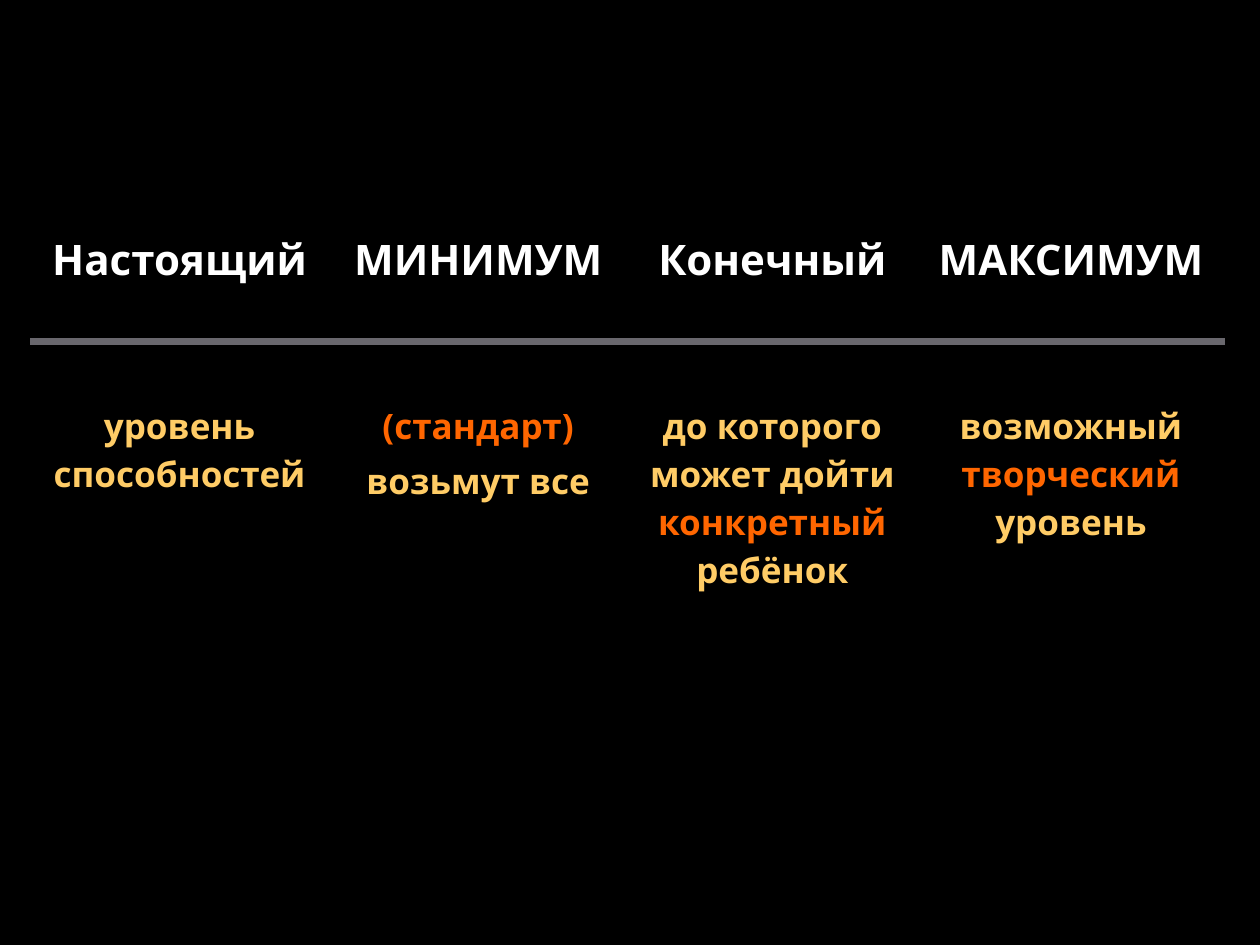
"""Build a slide with a four-column table comparing ability levels."""
from lxml.etree import SubElement
from pptx import Presentation
from pptx.dml.color import RGBColor
from pptx.enum.text import PP_ALIGN
from pptx.oxml.ns import qn
from pptx.util import Inches, Pt

COLORS = {"background": "000000", "heading": "FFFFFF", "body": "FFCC66",
          "accent": "FF6600", "rule": "69676D"}
NO_STYLE = "{2D5ABB26-0587-4C30-8999-92F81FD0307C}"
COLUMN_WIDTHS = [2.37, 2.37, 2.3, 2.44]
ROW_HEIGHTS = [0.93, 4.2]
HEADINGS = ["Настоящий", "МИНИМУМ", "Конечный", "МАКСИМУМ"]
DESCRIPTIONS = [
    [[("уровень способностей", "body")]],
    [[("(стандарт)", "accent")], [("возьмут все", "body")]],
    [[("до которого может дойти ", "body"), ("конкретный ", "accent"), ("ребёнок", "body")]],
    [[("возможный ", "body"), ("творческий ", "accent"), ("уровень", "body")]],
]


def write_run(paragraph, text, size=20, color="body"):
    run = paragraph.add_run()
    run.text = text
    run.font.name = "Noto Sans"
    run.font.size = Pt(size)
    run.font.bold = True
    run.font.color.rgb = RGBColor.from_string(COLORS[color])


def add_rule(cell, side):
    properties = cell._tc.get_or_add_tcPr()
    line = SubElement(properties, qn(f"a:{side}"), w=str(Pt(4.5)))
    fill = SubElement(line, qn("a:solidFill"))
    SubElement(fill, qn("a:srgbClr"), val=COLORS["rule"])


presentation = Presentation()
presentation.slide_width = Inches(10)
presentation.slide_height = Inches(7.5)
slide = presentation.slides.add_slide(presentation.slide_layouts[6])
slide.background.fill.solid()
slide.background.fill.fore_color.rgb = RGBColor.from_string(COLORS["background"])

table = slide.shapes.add_table(
    len(ROW_HEIGHTS), len(COLUMN_WIDTHS), Inches(0.24), Inches(1.78),
    Inches(sum(COLUMN_WIDTHS)), Inches(sum(ROW_HEIGHTS))).table
table.first_row = False
table.horz_banding = False
table._tbl.tblPr.find(qn("a:tableStyleId")).text = NO_STYLE
for column, width in zip(table.columns, COLUMN_WIDTHS):
    column.width = Inches(width)
for row, height in zip(table.rows, ROW_HEIGHTS):
    row.height = Inches(height)

for index, (heading, description) in enumerate(zip(HEADINGS, DESCRIPTIONS)):
    heading_cell = table.cell(0, index)
    add_rule(heading_cell, "lnB")
    heading_cell.fill.background()
    paragraph = heading_cell.text_frame.paragraphs[0]
    paragraph.alignment = PP_ALIGN.CENTER
    write_run(paragraph, heading, size=24, color="heading")

    body_cell = table.cell(1, index)
    add_rule(body_cell, "lnT")
    body_cell.fill.background()
    body_cell.margin_top = Inches(0.48)
    text_frame = body_cell.text_frame
    for position, runs in enumerate(description):
        paragraph = text_frame.add_paragraph() if position else text_frame.paragraphs[0]
        paragraph.alignment = PP_ALIGN.CENTER
        if position:
            paragraph.space_before = Pt(4)
        for text, color in runs:
            write_run(paragraph, text, color=color)

presentation.save("out.pptx")
